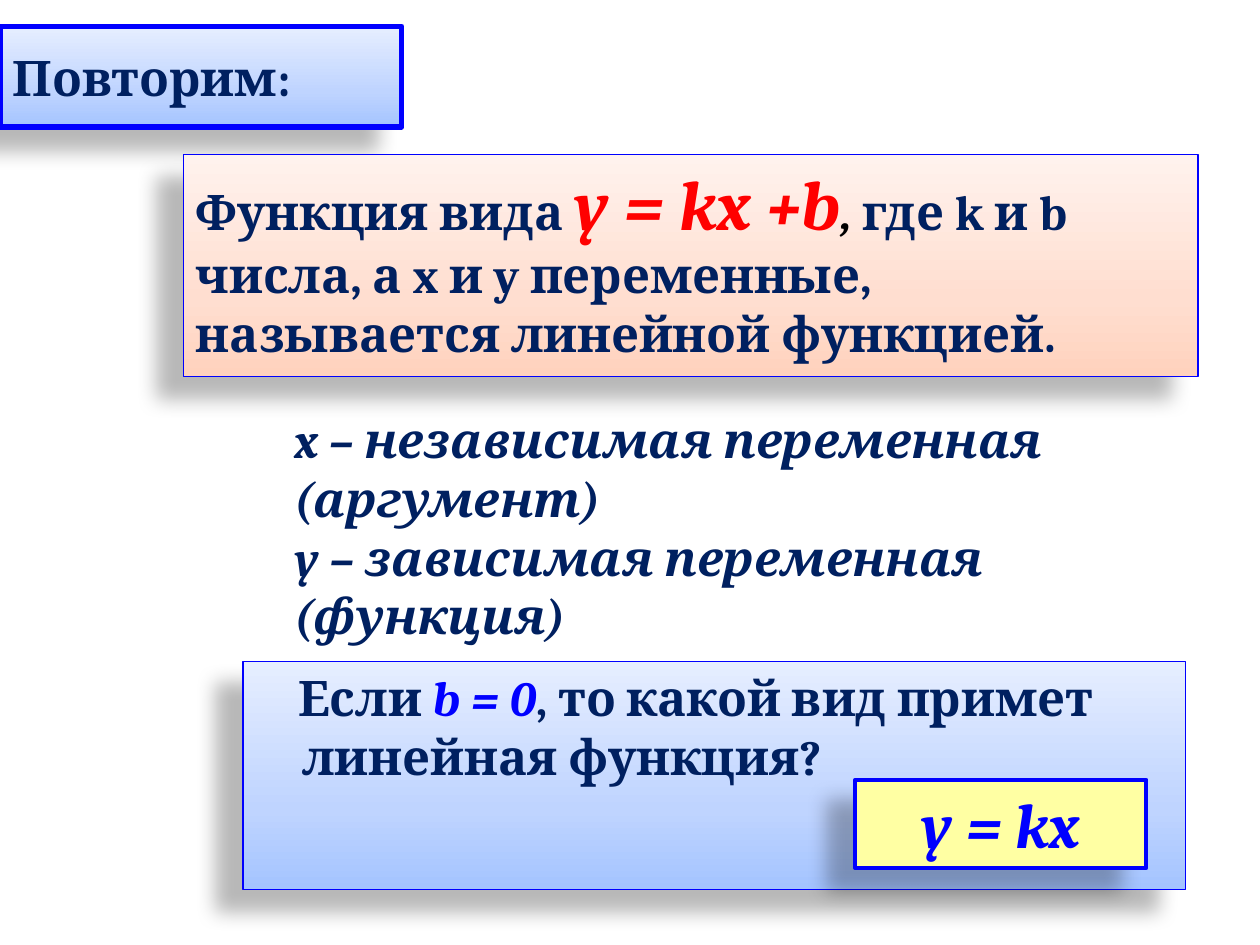
from copy import deepcopy

from lxml import etree
from pptx import Presentation
from pptx.dml.color import RGBColor
from pptx.enum import shapes, text
from pptx.oxml import parse_xml
from pptx.oxml.ns import nsdecls, qn
from pptx.util import Cm, Pt

NAVY = RGBColor(0x00, 0x20, 0x60)
BLUE = RGBColor(0x00, 0x00, 0xFF)
RED = RGBColor(0xFF, 0x00, 0x00)
BLACK = RGBColor(0x00, 0x00, 0x00)
YELLOW = RGBColor(0xFF, 0xFF, 0xA3)
# Gradient colours at 0, 35 and 100 %, from the bottom up
SKY = [RGBColor(0xA4, 0xC4, 0xFF), RGBColor(0xBF, 0xD4, 0xFF), RGBColor(0xE6, 0xEE, 0xFF)]
PEACH = [RGBColor(0xFF, 0xD2, 0xBD), RGBColor(0xFF, 0xDE, 0xD0), RGBColor(0xFF, 0xF2, 0xED)]
MIDDLE_STOP = 0.35

BASE_FONT = {"name": "Cambria", "size": Pt(28), "bold": True, "italic": False}


def paint_gradient(shape, colours):
    bottom, middle, top = colours
    shape.fill.gradient()
    shape.fill.gradient_angle = 90
    stop_list = shape._element.spPr.find(qn("a:gradFill")).find(qn("a:gsLst"))
    stop_list.insert(1, deepcopy(stop_list[0]))
    for stop, position, colour in zip(shape.fill.gradient_stops,
                                      (0, MIDDLE_STOP, 1), (bottom, middle, top)):
        stop.position = position
        stop.color.rgb = colour


def cast_shadow(shape):
    """Soft shadow falling to the lower left."""
    shape.shadow.inherit = False
    effects = shape._element.spPr.find(qn("a:effectLst"))
    shadow = etree.SubElement(effects, qn("a:outerShdw"), blurRad=str(Pt(11.8)),
                              dist=str(Pt(19.7)), dir="8460000", algn="ctr", rotWithShape="0")
    colour = etree.SubElement(shadow, qn("a:srgbClr"), val=str(BLACK))
    etree.SubElement(colour, qn("a:alpha"), val="28000")


def outline(shape, width):
    shape.line.color.rgb = BLUE
    shape.line.width = Pt(width)
    cast_shadow(shape)


def write(frame, paragraphs, align=text.PP_ALIGN.LEFT, anchor=text.MSO_ANCHOR.TOP):
    """Each paragraph is a list of (wording, colour, font changes)."""
    settings = {"word_wrap": True, "auto_size": text.MSO_AUTO_SIZE.NONE,
                "vertical_anchor": anchor}
    for key, value in settings.items():
        setattr(frame, key, value)
    for number, pieces in enumerate(paragraphs):
        paragraph = frame.add_paragraph() if number else frame.paragraphs[0]
        paragraph.alignment = align
        for wording, colour, changes in pieces:
            run = paragraph.add_run()
            run.text = wording
            run.font.color.rgb = colour
            for key, value in {**BASE_FONT, **changes}.items():
                setattr(run.font, key, value)


def add_panel(slide, box):
    return slide.shapes.add_shape(shapes.MSO_SHAPE.RECTANGLE, *box)


def place_title(slide, box):
    title = slide.shapes.title
    title.left, title.top, title.width, title.height = box
    title._element.spPr.append(parse_xml(
        f'<a:prstGeom {nsdecls("a")} prst="roundRect"><a:avLst>'
        '<a:gd name="adj" fmla="val 50000"/></a:avLst></a:prstGeom>'))
    paint_gradient(title, SKY)
    outline(title, 3)
    write(title.text_frame, [[("Повторим:", NAVY, {})]], anchor=text.MSO_ANCHOR.MIDDLE)


def add_definition(slide, box):
    definition = add_panel(slide, box)
    paint_gradient(definition, PEACH)
    outline(definition, 0.75)
    definition.text_frame.margin_right = Cm(1)
    write(definition.text_frame, [[
        ("Функция вида ", NAVY, {}),
        ("y = kx +b", RED, {"size": Pt(40), "italic": True}),
        (", ", BLACK, {"italic": True}),
        ("где k и b числа, а x и y переменные, называется линейной функцией.", NAVY, {}),
    ]])


def add_variables(slide, box):
    variables = slide.shapes.add_textbox(*box)
    write(variables.text_frame, [[(meaning, NAVY, {"italic": True})] for meaning in (
        "x – независимая переменная (аргумент)",
        "y – зависимая переменная (функция)",
    )])


def add_question(slide, box):
    """Question panel with the answer in its lower right corner."""
    question = add_panel(slide, box)
    paint_gradient(question, SKY)
    outline(question, 0.75)
    write(question.text_frame, [[
        ("Если ", NAVY, {}),
        ("b = 0", BLUE, {"italic": True}),
        (", то какой вид примет линейная функция?", NAVY, {}),
    ]])
    indents = question.text_frame.paragraphs[0]._p.get_or_add_pPr()
    indents.set("marL", str(Cm(0.95)))
    indents.set("indent", str(Cm(-0.09)))

    left, top, width, height = box
    answer_width, answer_height = Cm(5.87), Cm(1.78)
    answer = add_panel(slide, (left + width - answer_width - Cm(0.79),
                               top + height - answer_height - Cm(0.43),
                               answer_width, answer_height))
    answer.fill.solid()
    answer.fill.fore_color.rgb = YELLOW
    outline(answer, 2.25)
    write(answer.text_frame, [[("y = kx", BLUE, {"size": Pt(36), "italic": True})]],
          align=text.PP_ALIGN.CENTER)


def main():
    deck = Presentation()
    deck.slide_width, deck.slide_height = Cm(25.4), Cm(19.05)
    slide = deck.slides.add_slide(deck.slide_layouts[5])
    place_title(slide, (Cm(0), Cm(0.53), Cm(8.1), Cm(2.03)))
    add_definition(slide, (Cm(3.7), Cm(3.12), Cm(20.45), Cm(4.47)))
    add_variables(slide, (Cm(5.69), Cm(8.13), Cm(18.8), Cm(5)))
    add_question(slide, (Cm(4.9), Cm(13.33), Cm(19), Cm(4.6)))
    deck.save("out.pptx")


if __name__ == "__main__":
    main()
